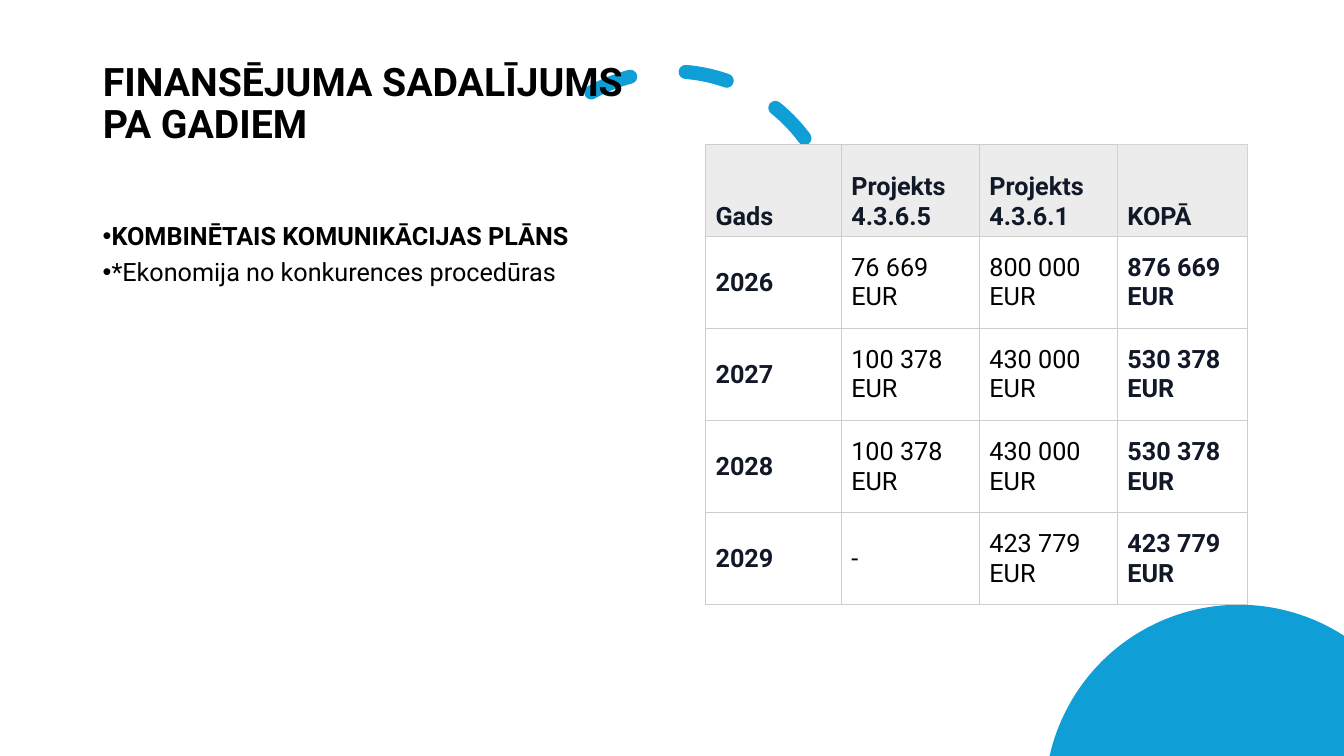
import math
from pptx import Presentation
from pptx.util import Cm, Pt
from pptx.dml.color import RGBColor
from pptx.enum.dml import MSO_LINE
from pptx.enum.shapes import MSO_SHAPE
from pptx.enum.text import MSO_ANCHOR, MSO_AUTO_SIZE, PP_ALIGN
from pptx.oxml import parse_xml
from pptx.oxml.ns import nsdecls

ARC, DASH = MSO_SHAPE.ARC, MSO_LINE.DASH
TOP, MIDDLE, BOTTOM = MSO_ANCHOR.TOP, MSO_ANCHOR.MIDDLE, MSO_ANCHOR.BOTTOM
LEFT, FIXED = PP_ALIGN.LEFT, MSO_AUTO_SIZE.NONE
BLUE = RGBColor(0x0F, 0x9E, 0xD5)
BLACK = RGBColor(0, 0, 0)
NAVY = RGBColor(0x11, 0x18, 0x27)
WHITE = RGBColor(0xFF, 0xFF, 0xFF)
GREY = RGBColor(0xEC, 0xEC, 0xEC)
RULE = RGBColor(0xCD, 0xCD, 0xCD)
PALE = RGBColor(0xD1, 0xD5, 0xDB)
WIDE, HIGH = 33.87, 19.05


def add_run(para, text, size, color, bold):
    run = para.add_run()
    run.text = text
    font = run.font
    font.name, font.size, font.bold = "Roboto", Pt(size), bold
    font.color.rgb = color


def add_edge(cell, index, side, color, width):
    """Draw one cell border; index keeps the borders ahead of the fill."""
    cell._tc.get_or_add_tcPr().insert(index, parse_xml(
        f'<a:ln{side} {nsdecls("a")} w="{Pt(width)}"><a:solidFill>'
        f'<a:srgbClr val="{color}"/></a:solidFill></a:ln{side}>'))


prs = Presentation()
prs.slide_width, prs.slide_height = Cm(WIDE), Cm(HIGH)
slide = prs.slides.add_slide(prs.slide_layouts[5])
shapes = slide.shapes
title = shapes.title

# Blue disc cut off by the slide's lower right corner
mid_x, mid_y, radius = 31.22, 20.13, 4.89
first = math.pi - math.asin((mid_y - HIGH) / radius)
last = math.acos((WIDE - mid_x) / radius)
steps = 60
rim = []
for i in range(steps + 1):
    angle = first + (last - first) * i / steps
    rim.append((Cm(mid_x + radius * math.cos(angle)),
                Cm(mid_y - radius * math.sin(angle))))
pen = shapes.build_freeform(*rim[0])
pen.add_line_segments(rim[1:] + [(Cm(WIDE), Cm(HIGH))], close=True)
disc = pen.convert_to_shape()
disc.shadow.inherit = False
disc.fill.solid()
disc.fill.fore_color.rgb = BLUE
disc.line.fill.background()

# Dashed arc
arc = shapes.add_shape(ARC, Cm(12.78), Cm(1.8), Cm(8.31), Cm(8.31))
arc.adjustments[0], arc.adjustments[1] = 144.42, 0
arc.shadow.inherit = False
arc.fill.background()
arc.line.color.rgb = BLUE
arc.line.width = Pt(10)
arc.line.dash_style = DASH
arc.line._get_or_add_ln().set("cap", "rnd")

# Title, moved in front of the arc
shapes._spTree.append(title._element)
title.left, title.top = Cm(2.34), Cm(1.32)
title.width, title.height = Cm(14.6), Cm(3.68)
frame = title.text_frame
frame.word_wrap, frame.auto_size = True, FIXED
frame.vertical_anchor = MIDDLE
frame.margin_bottom = Cm(1.17)
para = frame.paragraphs[0]
para.alignment, para.line_spacing = LEFT, 0.9
add_run(para, "FINANSĒJUMA SADALĪJUMS PA GADIEM", 28, BLACK, True)

# Bullets
box = shapes.add_textbox(Cm(2.34), Cm(5.51), Cm(14.6), Cm(11.63))
frame = box.text_frame
frame.word_wrap, frame.vertical_anchor = True, TOP
points = [("KOMBINĒTAIS KOMUNIKĀCIJAS PLĀNS", True),
          ("*Ekonomija no konkurences procedūras", False)]
for i, (text, bold) in enumerate(points):
    para = frame.add_paragraph() if i else frame.paragraphs[0]
    para.line_spacing, para.space_after = 0.9, Pt(6)
    props = para._p.get_or_add_pPr()
    props.set("marL", "0")
    props.set("indent", str(-Cm(0.64)))
    props.append(parse_xml(f'<a:buFont {nsdecls("a")} typeface="Arial"/>'))
    props.append(parse_xml(f'<a:buChar {nsdecls("a")} char="•"/>'))
    add_run(para, text, 18, BLACK, bold)

# Funding by year
rows = [
    ["Gads", "Projekts 4.3.6.5", "Projekts 4.3.6.1", "KOPĀ"],
    ["2026", "76 669\nEUR", "800 000 EUR", "876 669 EUR"],
    ["2027", "100 378 EUR", "430 000 EUR", "530 378 EUR"],
    ["2028", "100 378\nEUR", "430 000 EUR", "530 378\nEUR"],
    ["2029", "-", "423 779 EUR", "423 779 EUR"],
]
widths = [3.42, 3.48, 3.48, 3.28]
row_high = 2.32
table = shapes.add_table(len(rows), len(widths), Cm(17.78), Cm(3.64),
                         Cm(sum(widths)), Cm(row_high * len(rows))).table
table.first_row = table.horz_banding = False
for col, width in zip(table.columns, widths):
    col.width = Cm(width)
for r, row in enumerate(rows):
    table.rows[r].height = Cm(row_high)
    for c, text in enumerate(row):
        cell = table.cell(r, c)
        head = r == 0
        bold = head or c in (0, 3)
        cell.vertical_anchor = BOTTOM if head else MIDDLE
        cell.fill.solid()
        cell.fill.fore_color.rgb = GREY if head else WHITE
        for i, line in enumerate(text.split("\n")):
            frame = cell.text_frame
            para = frame.add_paragraph() if i else frame.paragraphs[0]
            add_run(para, line, 18, NAVY if bold else BLACK, bold)
        total = head and c == 3
        edges = [("L", PALE if total else RULE, 0.6),
                 ("R", PALE if head and c >= 2 else RULE, 0.6),
                 ("T", PALE if total else RULE, 0.6 if head else 1),
                 ("B", RULE, 1)]
        for i, edge in enumerate(edges):
            add_edge(cell, i, *edge)

prs.save("out.pptx")
